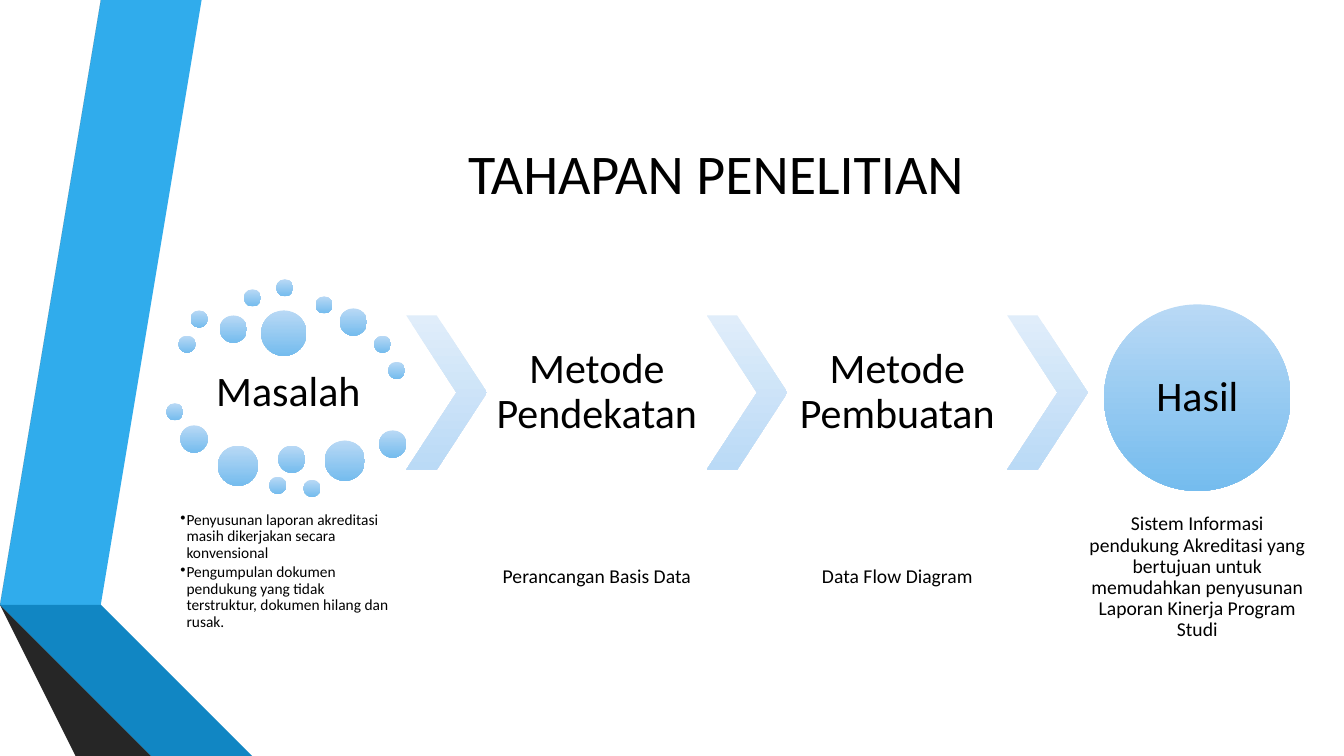
from lxml.etree import SubElement
from pptx import Presentation
from pptx.dml.color import RGBColor
from pptx.enum.shapes import MSO_SHAPE as Shape
from pptx.enum.text import MSO_ANCHOR as Anchor, PP_ALIGN as Align
from pptx.oxml.ns import qn
from pptx.util import Inches, Pt

BLACK = RGBColor(0x00, 0x00, 0x00)
BALL = (RGBColor(0xB9, 0xD9, 0xF5), RGBColor(0x75, 0xBC, 0xEE))
ARROW = (RGBColor(0xE0, 0xED, 0xFA), RGBColor(0xBA, 0xDA, 0xF6))
SKY = RGBColor(0x30, 0xAC, 0xEC)
GRAY = RGBColor(0x59, 0x59, 0x59)
SOOT = RGBColor(0x26, 0x26, 0x26)
NAVY = RGBColor(0x0B, 0x59, 0x82)
BLUE = RGBColor(0x11, 0x86, 0xC3)
COAL = RGBColor(0x3F, 0x3F, 0x3F)

RIBBONS = [
    (SKY, [(0.5, 5.78), (0.77, 5.83), (1.73, 0), (1.45, 0)]),
    (GRAY, [(1.39, 0), (1.11, 0), (0.16, 5.73), (0.44, 5.77)]),
    (SOOT, [(0.16, 5.73), (1.45, 7.5), (1.51, 7.5)]),
    (NAVY, [(0.5, 5.79), (2.08, 7.5), (2.14, 7.5)]),
    (BLUE, [(0.5, 5.79), (2.14, 7.5), (2.83, 7.5), (0.77, 5.83), (0.5, 5.78)]),
    (COAL, [(2.02, 7.5), (0.48, 5.83), (0.43, 5.78), (0.44, 5.77), (0.16, 5.73), (1.51, 7.5)]),
]
DOTS = {
    0.17: [(0, 1.23), (0.12, 0.56), (0.24, 0.31), (0.77, 0.1), (1.09, 0), (1.48, 0.17),
           (2.06, 0.56), (2.2, 0.82), (1.02, 1.96), (1.36, 1.99)],
    0.27: [(0.53, 0.36), (1.72, 0.29), (0.14, 1.45), (1.11, 1.65), (2.11, 1.5)],
    0.4: [(0.51, 1.65), (1.57, 1.6)],
    0.45: [(0.94, 0.31)],
}
PROBLEMS = [
    "Penyusunan laporan akreditasi masih dikerjakan secara konvensional",
    "Pengumpulan dokumen pendukung yang tidak terstruktur, dokumen hilang dan rusak.",
]
METHODS = [("Metode Pendekatan", "Perancangan Basis Data"), ("Metode Pembuatan", "Data Flow Diagram")]
RESULT = ("Sistem Informasi pendukung Akreditasi yang bertujuan untuk memudahkan "
          "penyusunan Laporan Kinerja Program Studi")
COLUMN, GAP = 2.18, 0.8
NOTE_TOP, NOTE_HEIGHT = 5.06, 1.34


def place_text(page, text, left, top, width, height, size=14, inset=0.02,
               anchor=Anchor.MIDDLE, align=Align.CENTER, bullet=None):
    """Put one text, or a list of paragraphs, in a text box."""
    box = page.shapes.add_textbox(Inches(left), Inches(top), Inches(width), Inches(height))
    frame = box.text_frame
    frame.word_wrap = True
    frame.vertical_anchor = anchor
    frame.margin_left = frame.margin_right = Inches(inset)
    frame.margin_top = frame.margin_bottom = Inches(inset)
    frame.text = text if isinstance(text, str) else "\n".join(text)
    for index, para in enumerate(frame.paragraphs):
        para.alignment = align
        para.line_spacing = 0.9
        if index:
            para.space_before = Pt(1.6)
        if bullet:
            para.level = 1
            properties = para._p.get_or_add_pPr()
            properties.set("marL", str(Inches(0.06)))
            properties.set("indent", str(Inches(-0.08)))
            SubElement(properties, qn("a:buChar"), char=bullet)
        para.font.size = Pt(size)
        para.font.name = "Calibri"
        para.font.color.rgb = BLACK


def place_shape(page, kind, colors, left, top, width, height):
    """Draw a preset shape with a gradient running downwards."""
    shape = page.shapes.add_shape(kind, Inches(left), Inches(top), Inches(width), Inches(height))
    shape.shadow.inherit = False
    shape.line.fill.background()
    shape.fill.gradient()
    shape.fill.gradient_angle = 270
    for position, (stop, color) in enumerate(zip(shape.fill.gradient_stops, colors)):
        stop.position = position
        stop.color.rgb = color
    return shape


def draw_ribbons(page, left, top):
    """Draw the folded ribbons along the left edge."""
    for color, points in RIBBONS:
        corners = [(left + x, top + y) for x, y in points]
        builder = page.shapes.build_freeform(*corners[0], scale=Inches(1))
        builder.add_line_segments(corners[1:], close=True)
        ribbon = builder.convert_to_shape()
        ribbon.shadow.inherit = False
        ribbon.fill.solid()
        ribbon.fill.fore_color.rgb = color
        ribbon.line.fill.background()


def write_title(page, text, left, top, width, height):
    """Move and format the title placeholder."""
    title = page.shapes.title
    title.left, title.top = Inches(left), Inches(top)
    title.width, title.height = Inches(width), Inches(height)
    title.text_frame.text = text
    title.text_frame.vertical_anchor = Anchor.MIDDLE
    para = title.text_frame.paragraphs[0]
    para.alignment = Align.CENTER
    para.font.size = Pt(40)
    para.font.name = "Calibri"
    para.font.color.rgb = BLACK


def draw_problem(page, left, top):
    """Draw the ring of dots with its heading and bullets."""
    for size, places in DOTS.items():
        for x, y in places:
            place_shape(page, Shape.OVAL, BALL, left + x, top + y, size, size)
    place_text(page, "Masalah", left + 0.12, top + 0.77, COLUMN, 0.72, size=30, inset=0.04)
    place_text(page, PROBLEMS, left + 0.12, NOTE_TOP, COLUMN, NOTE_HEIGHT, size=11,
               anchor=Anchor.TOP, align=Align.LEFT, bullet="•")


def draw_arrow(page, left, top, height):
    """Draw the chevron before a step."""
    chevron = place_shape(page, Shape.CHEVRON, ARROW, left, top, GAP, height)
    chevron.adjustments[0] = 0.623


def draw_method(page, heading, note, left, top, height):
    """Write a method heading and the note below it."""
    place_text(page, heading, left, top, COLUMN, height, size=30, inset=0.04)
    place_text(page, note, left, NOTE_TOP, COLUMN, NOTE_HEIGHT)


def draw_result(page, left, top, size):
    """Draw the result ball with its note centred below."""
    place_shape(page, Shape.OVAL, BALL, left, top, size, size)
    place_text(page, "Hasil", left + 0.27, top + 0.27, size - 0.54, size - 0.54, size=30, inset=0)
    place_text(page, RESULT, left + (size - COLUMN) / 2, NOTE_TOP, COLUMN, NOTE_HEIGHT)


def build_stages(deck):
    """Build the slide of research stages."""
    page = deck.slides.add_slide(deck.slide_layouts[5])
    draw_ribbons(page, 0, 0)
    write_title(page, "TAHAPAN PENELITIAN", 1.62, 0.75, 10.96, 1.92)
    draw_problem(page, 1.65, 2.77)
    first, top, height = 4.03, 3.13, 1.53
    for index in range(len(METHODS) + 1):
        draw_arrow(page, first + index * (COLUMN + GAP), top, height)
    for index, (heading, note) in enumerate(METHODS):
        draw_method(page, heading, note, first + GAP + index * (COLUMN + GAP), top, height)
    draw_result(page, 10.95, 3.02, 1.85)


def main():
    """Create and save the deck."""
    deck = Presentation()
    deck.slide_width, deck.slide_height = Inches(13.33), Inches(7.5)
    build_stages(deck)
    deck.save("out.pptx")


if __name__ == "__main__":
    main()
